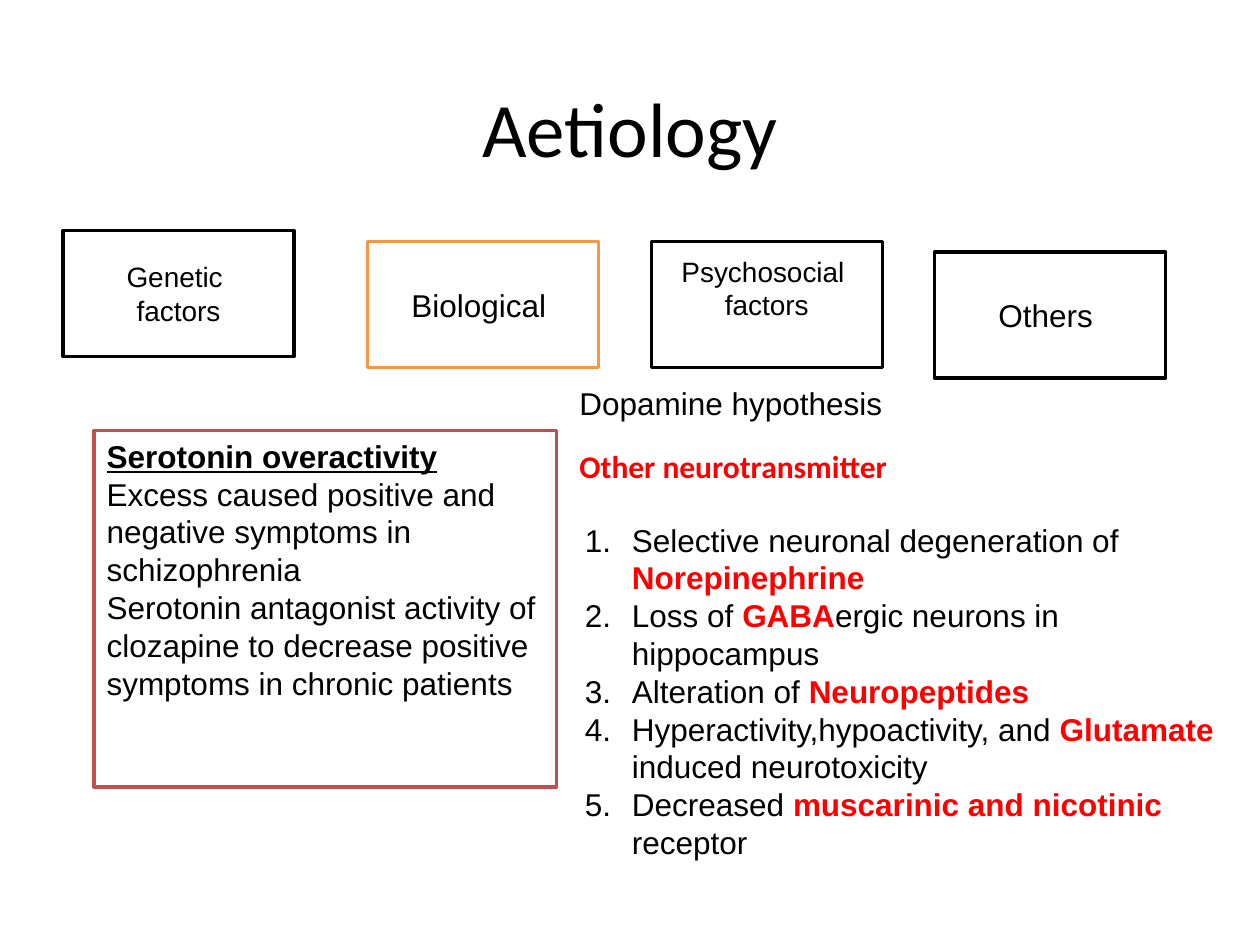
from dataclasses import dataclass

from lxml.etree import SubElement
from pptx import Presentation
from pptx.dml.color import RGBColor
from pptx.enum.shapes import MSO_SHAPE
from pptx.enum.text import MSO_ANCHOR as Anchor, PP_ALIGN as Align
from pptx.oxml.ns import qn
from pptx.util import Cm, Pt


@dataclass(frozen=True)
class Theme:
    black: str = "000000"
    white: str = "FFFFFF"
    red: str = "FF0000"
    orange: str = "F79646"
    brick: str = "C0504D"
    heading_font: str = "Calibri"
    body_font: str = "Arial"
    title_size: int = 44
    body_size: int = 18
    small_size: int = 16
    border: int = 2


class SlideBuilder:
    """Draws text, boxes and numbered lists on one slide in a shared theme."""

    def __init__(self, slide, theme):
        self.slide = slide
        self.theme = theme

    def run(self, paragraph, text, size=None, color=None, font=None, bold=False, underline=False):
        run = paragraph.add_run()
        run.text = text
        run.font.name = font or self.theme.body_font
        run.font.size = Pt(size or self.theme.body_size)
        run.font.bold = bold
        run.font.underline = underline
        run.font.color.rgb = RGBColor.from_string(color or self.theme.black)

    def paragraphs(self, frame, count, align=Align.LEFT):
        for index in range(count):
            paragraph = frame.add_paragraph() if index else frame.paragraphs[0]
            paragraph.alignment = align
            yield paragraph

    def text_frame(self, area, wrap=True):
        shape = self.slide.shapes.add_textbox(*map(Cm, area))
        shape.text_frame.word_wrap = wrap
        return shape.text_frame

    def label(self, area, text, align=Align.LEFT, anchor=Anchor.TOP, wrap=True, **style):
        frame = self.text_frame(area, wrap)
        frame.vertical_anchor = anchor
        for paragraph in self.paragraphs(frame, 1, align):
            self.run(paragraph, text, **style)

    def box(self, area, lines, border, size=None, align=Align.CENTER, anchor=Anchor.MIDDLE,
            wrap=False, headed=False, bottom=0.13):
        shape = self.slide.shapes.add_shape(MSO_SHAPE.RECTANGLE, *map(Cm, area))
        shape.shadow.inherit = False
        shape.fill.solid()
        shape.fill.fore_color.rgb = RGBColor.from_string(self.theme.white)
        shape.line.color.rgb = RGBColor.from_string(border)
        shape.line.width = Pt(self.theme.border)
        frame = shape.text_frame
        frame.word_wrap = wrap
        frame.vertical_anchor = anchor
        frame.margin_bottom = Cm(bottom)
        for index, paragraph in enumerate(self.paragraphs(frame, len(lines), align)):
            heading = headed and index == 0
            self.run(paragraph, lines[index], size, bold=heading, underline=heading)

    def numbered_list(self, area, items, indent=0.95):
        frame = self.text_frame(area)
        for item, paragraph in zip(items, self.paragraphs(frame, len(items))):
            properties = paragraph._p.get_or_add_pPr()
            properties.set("marL", str(Cm(indent)))
            properties.set("indent", str(-Cm(indent)))
            SubElement(properties, qn("a:buFont"), typeface=self.theme.body_font)
            SubElement(properties, qn("a:buAutoNum"), type="arabicPeriod")
            for text, key_term in item:
                color = self.theme.red if key_term else self.theme.black
                self.run(paragraph, text, color=color, bold=key_term)


def main():
    theme = Theme()
    presentation = Presentation()
    presentation.slide_width = Cm(25.4)
    presentation.slide_height = Cm(19.05)
    slide = presentation.slides.add_slide(presentation.slide_layouts[6])
    builder = SlideBuilder(slide, theme)

    builder.label((1.9, 0.96, 21.6, 3.18), "Aetiology", Align.CENTER, Anchor.MIDDLE,
                  size=theme.title_size, font=theme.heading_font)
    builder.label((11.43, 7.62, 6.83, 1.78), "Dopamine hypothesis")
    serotonin = [
        "Serotonin overactivity",
        "Excess caused positive and negative symptoms in schizophrenia",
        "Serotonin antagonist activity of clozapine to decrease positive symptoms "
        "in chronic patients",
    ]
    builder.box((1.9, 8.68, 9.32, 7.19), serotonin, theme.brick, align=Align.LEFT,
                anchor=Anchor.TOP, wrap=True, headed=True)

    factors = [
        (1.27, 4.65, ["Genetic ", "factors"], theme.black, theme.small_size, 0.13),
        (7.41, 4.87, ["Biological "], theme.orange, theme.body_size, 0.13),
        (13.13, 4.87, ["Psychosocial ", "factors"], theme.black, theme.small_size, 0.8),
        (18.84, 5.08, ["Others "], theme.black, theme.body_size, 0.13),
    ]
    for left, top, lines, border, size, bottom in factors:
        builder.box((left, top, 4.66, 2.54), lines, border, size, bottom=bottom)

    changes = [
        [("Selective neuronal degeneration of ", False), ("Norepinephrine", True)],
        [("Loss of ", False), ("GABA", True), ("ergic neurons in hippocampus", False)],
        [("Alteration of ", False), ("Neuropeptides", True)],
        [("Hyperactivity,hypoactivity, and ", False), ("Glutamate", True),
         (" induced neurotoxicity", False)],
        [("Decreased ", False), ("muscarinic and nicotinic ", True), ("receptor", False)],
    ]
    builder.numbered_list((11.54, 10.37, 13.76, 7.19), changes)
    builder.label((11.43, 8.89, 6.98, 1.02), "Other neurotransmitter", wrap=False,
                  color=theme.red, font=theme.heading_font, bold=True)
    presentation.save("out.pptx")


if __name__ == "__main__":
    main()
